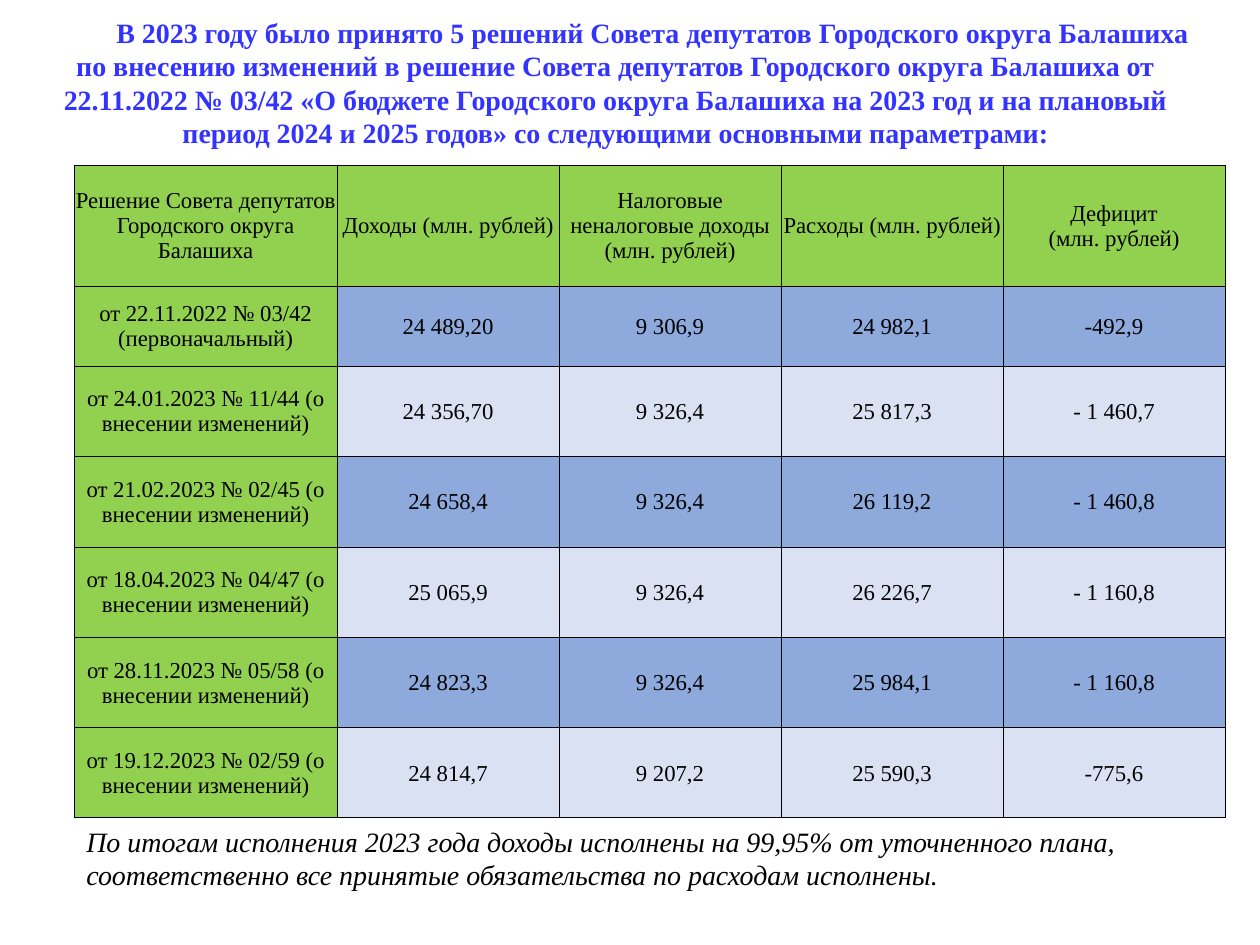
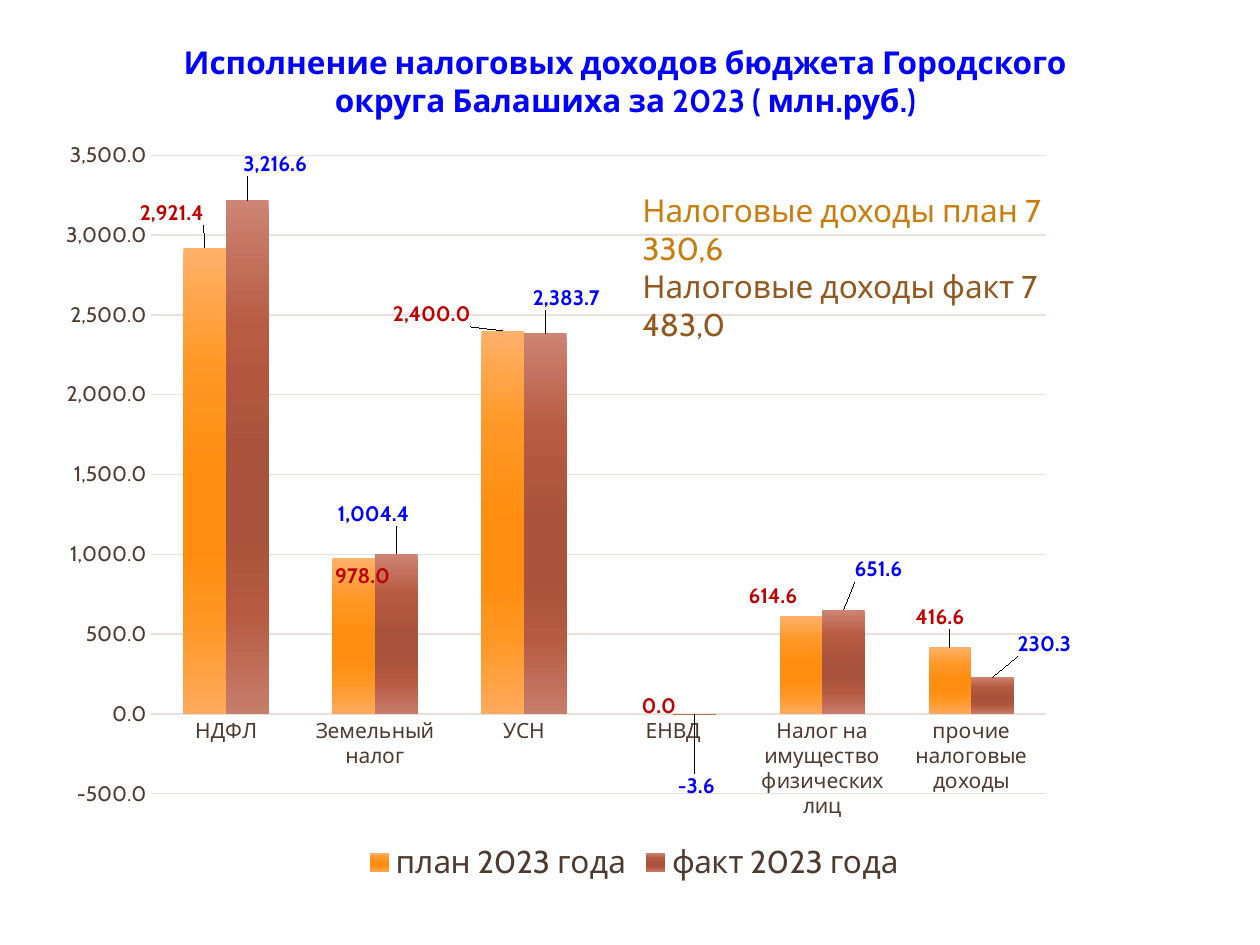
from lxml.etree import SubElement
from pptx import Presentation
from pptx.chart.data import CategoryChartData
from pptx.dml.color import RGBColor
from pptx.enum.chart import XL_CHART_TYPE, XL_LABEL_POSITION, XL_LEGEND_POSITION, XL_TICK_MARK
from pptx.enum.text import MSO_ANCHOR, MSO_AUTO_SIZE, PP_ALIGN
from pptx.oxml import parse_xml
from pptx.oxml.ns import nsdecls, qn
from pptx.util import Pt

SCALE = 914400 / 126
SERIF = "Times New Roman"
SANS = "Cabin"
NUMBER_FORMAT = "#,##0.0"
BLACK = RGBColor(0x00, 0x00, 0x00)
VIOLET_BLUE = RGBColor(0x33, 0x33, 0xFF)
BLUE = RGBColor(0x00, 0x00, 0xFF)
RED = RGBColor(0xC0, 0x00, 0x00)
GREEN = RGBColor(0x92, 0xD0, 0x50)
ROW_DARK = RGBColor(0x8E, 0xA9, 0xDB)
ROW_LIGHT = RGBColor(0xD9, 0xE1, 0xF2)
BROWN = RGBColor(0x4E, 0x3B, 0x30)
GRID = RGBColor(0xE9, 0xE0, 0xDB)
PLAN_TEXT = RGBColor(0xC8, 0x7D, 0x0E)
FACT_TEXT = RGBColor(0x91, 0x58, 0x1F)


def px(*values):
    lengths = [round(value * SCALE) for value in values]
    return lengths if len(lengths) > 1 else lengths[0]


def add_text(slide, box, lines, font_name, size, alignment=PP_ALIGN.LEFT, bold=False, italic=False):
    text_frame = slide.shapes.add_textbox(*px(*box)).text_frame
    text_frame.word_wrap = True
    text_frame.auto_size = MSO_AUTO_SIZE.SHAPE_TO_FIT_TEXT
    text_frame.text = "\n".join(text for text, color in lines)
    for paragraph, (text, color) in zip(text_frame.paragraphs, lines):
        paragraph.alignment = alignment
        paragraph.font.name = font_name
        paragraph.font.size = Pt(size)
        paragraph.font.bold = bold
        paragraph.font.italic = italic
        paragraph.font.color.rgb = color
    return text_frame


presentation = Presentation()
presentation.slide_width, presentation.slide_height = px(1260, 945)
blank_layout = presentation.slide_layouts[6]

slide = presentation.slides.add_slide(blank_layout)
title = add_text(
    slide, (-164, 9, 1370, 149),
    [("В 2023 году было принято 5 решений Совета депутатов Городского округа Балашиха "
      "по внесению изменений в решение Совета депутатов Городского округа Балашиха "
      "от 22.11.2022 № 03/42 «О бюджете Городского округа Балашиха на 2023 год и на плановый "
      "период 2024 и 2025 годов» со следующими основными параметрами:", VIOLET_BLUE)],
    SERIF, 16, PP_ALIGN.CENTER, bold=True)
title_properties = title.paragraphs[0]._p.get_or_add_pPr()
title_properties.set("marL", str(px(189)))
title_properties.set("indent", str(px(74)))
title.paragraphs[0].space_after = Pt(8)

add_text(
    slide, (74, 818, 1160, 81),
    [("По итогам исполнения 2023 года доходы исполнены на 99,95% от уточненного плана, "
      "соответственно все принятые обязательства по расходам исполнены.", BLACK)],
    SERIF, 16, italic=True)

AMENDED = "(о внесении изменений)"
budget_rows = [
    ("Решение Совета депутатов Городского округа Балашиха", "Доходы (млн. рублей)",
     "Налоговые неналоговые доходы (млн. рублей)", "Расходы (млн. рублей)",
     "Дефицит\v(млн. рублей)"),
    ("от 22.11.2022 № 03/42 (первоначальный)", "24 489,20", "9 306,9", "24 982,1", "-492,9"),
    (f"от 24.01.2023 № 11/44 {AMENDED}", "24 356,70", "9 326,4", "25 817,3", "- 1 460,7"),
    (f"от 21.02.2023 № 02/45 {AMENDED}", "24 658,4", "9 326,4", "26 119,2", "- 1 460,8"),
    (f"от 18.04.2023 № 04/47 {AMENDED}", "25 065,9", "9 326,4", "26 226,7", "- 1 160,8"),
    (f"от 28.11.2023 № 05/58 {AMENDED}", "24 823,3", "9 326,4", "25 984,1", "- 1 160,8"),
    (f"от 19.12.2023 № 02/59 {AMENDED}", "24 814,7", "9 207,2", "25 590,3", "-775,6"),
]
column_widths = [263] + [222] * 4
row_heights = [121, 80, 90, 91, 90, 91, 90]
table = slide.shapes.add_table(
    len(row_heights), len(column_widths),
    *px(74, 165, sum(column_widths), sum(row_heights))).table
for column, width in zip(table.columns, column_widths):
    column.width = px(width)
for row, height in zip(table.rows, row_heights):
    row.height = px(height)
for row_index, texts in enumerate(budget_rows):
    for column_index, text in enumerate(texts):
        cell = table.cell(row_index, column_index)
        cell.text = text
        cell.vertical_anchor = MSO_ANCHOR.MIDDLE
        cell.margin_left = cell.margin_right = cell.margin_top = px(1)
        cell.margin_bottom = 0
        paragraph = cell.text_frame.paragraphs[0]
        paragraph.alignment = PP_ALIGN.CENTER
        paragraph.font.name = SERIF
        paragraph.font.size = Pt(13)
        paragraph.font.bold = False
        paragraph.font.color.rgb = BLACK
        cell_properties = cell._tc.get_or_add_tcPr()
        for side in ("a:lnL", "a:lnR", "a:lnT", "a:lnB"):
            border = SubElement(cell_properties, qn(side), w=str(Pt(0.5)))
            border_fill = SubElement(border, qn("a:solidFill"))
            SubElement(border_fill, qn("a:srgbClr"), val=str(BLACK))
        cell.fill.solid()
        if row_index == 0 or column_index == 0:
            cell.fill.fore_color.rgb = GREEN
        else:
            cell.fill.fore_color.rgb = ROW_DARK if row_index % 2 else ROW_LIGHT

slide = presentation.slides.add_slide(blank_layout)
add_text(
    slide, (134, 37, 983, 89),
    [("Исполнение налоговых доходов бюджета Городского округа Балашиха за 2023 ( млн.руб.)", BLUE)],
    SANS, 18, PP_ALIGN.CENTER, bold=True)

CHART_WIDTH, CHART_HEIGHT = 1160, 753
chart_data = CategoryChartData(number_format=NUMBER_FORMAT)
chart_data.categories = ["НДФЛ", "Земельный налог", "УСН", "ЕНВД",
                         "Налог на имущество физических лиц", "прочие налоговые доходы"]
chart_data.add_series("план 2023 года", (2921.4, 978, 2400, 0, 614.6, 416.6))
chart_data.add_series("факт 2023 года", (3216.6, 1004.4, 2383.7, -3.6, 651.6, 230.3))
chart = slide.shapes.add_chart(
    XL_CHART_TYPE.COLUMN_CLUSTERED, *px(54, 135, CHART_WIDTH, CHART_HEIGHT), chart_data).chart
chart.has_title = False
chart.font.name = SANS
chart.font.size = Pt(10)
chart.font.color.rgb = BLACK
chart.has_legend = True
chart.legend.position = XL_LEGEND_POSITION.BOTTOM
chart.legend.include_in_layout = False
chart.legend.font.name = SANS
chart.legend.font.size = Pt(18)
chart.legend.font.color.rgb = BROWN

for axis in (chart.category_axis, chart.value_axis):
    axis.major_tick_mark = axis.minor_tick_mark = XL_TICK_MARK.NONE
    axis.tick_labels.font.name = SANS
    axis.tick_labels.font.size = Pt(12)
    axis.tick_labels.font.color.rgb = BROWN
value_axis = chart.value_axis
value_axis.minimum_scale = -500
value_axis.maximum_scale = 3500
value_axis.major_unit = 500
value_axis.tick_labels.number_format = NUMBER_FORMAT
value_axis.tick_labels.number_format_is_linked = False
value_axis.format.line.fill.background()
for line in (chart.category_axis.format.line, value_axis.major_gridlines.format.line):
    line.color.rgb = GRID
    line.width = Pt(0.75)

plot_area = chart._chartSpace.chart.plotArea
for layout in plot_area.findall(qn("c:layout")):
    plot_area.remove(layout)
plot_area.insert(0, parse_xml(
    f'<c:layout {nsdecls("c")}><c:manualLayout><c:layoutTarget val="inner"/>'
    '<c:xMode val="edge"/><c:yMode val="edge"/><c:x val="0.084"/><c:y val="0.027"/>'
    '<c:w val="0.771"/><c:h val="0.848"/></c:manualLayout></c:layout>'))

plot = chart.plots[0]
plot.gap_width = 150
plot.overlap = 0
plot.vary_by_categories = False
gradient_positions = (0, 25, 50, 65, 80, 100)
series_styles = [
    (RED, ("FFB16A", "FF9826", "FF8D0F", "FF8D0F", "FF9724", "FFAA5C"),
     [(-33, -17), (9, 36), (-71, 1), (7, 10), (-28, -2), (-10, -13)]),
    (BLUE, ("CD8473", "B75B42", "AA533C", "AA533C", "B65B42", "C77D6B"),
     [(28, -19), (-23, -22), (21, -18), (2, 54), (35, -23), (52, -16)]),
]
for series, (label_color, gradient_colors, label_offsets) in zip(plot.series, series_styles):
    series.invert_if_negative = False
    series.format.fill.gradient()
    series.format.fill.gradient_angle = 270
    stops = series._element.find(".//" + qn("a:gsLst"))
    for stop in list(stops):
        stops.remove(stop)
    for position, color in zip(gradient_positions, gradient_colors):
        stop = SubElement(stops, qn("a:gs"), pos=str(position * 1000))
        SubElement(stop, qn("a:srgbClr"), val=color)
    series_labels = series.data_labels
    series_labels.show_value = True
    series_labels.number_format = NUMBER_FORMAT
    series_labels.number_format_is_linked = False
    series_labels.position = XL_LABEL_POSITION.OUTSIDE_END
    point_labels = [series.points[index].data_label for index in range(len(label_offsets))]
    for label in [series_labels] + point_labels:
        label.font.name = SANS
        label.font.size = Pt(12)
        label.font.bold = True
        label.font.color.rgb = label_color
    for label, (shift_x, shift_y) in zip(point_labels, label_offsets):
        label.position = XL_LABEL_POSITION.OUTSIDE_END
    for label_element, (shift_x, shift_y) in zip(series._element.iter(qn("c:dLbl")), label_offsets):
        label_element.insert(1, parse_xml(
            f'<c:layout {nsdecls("c")}><c:manualLayout><c:x val="{shift_x / CHART_WIDTH:.4f}"/>'
            f'<c:y val="{shift_y / CHART_HEIGHT:.4f}"/></c:manualLayout></c:layout>'))

add_text(
    slide, (630, 185, 476, 89),
    [("Налоговые доходы план 7 330,6", PLAN_TEXT), ("Налоговые доходы факт 7 483,0", FACT_TEXT)],
    SANS, 18)

presentation.save("out.pptx")
